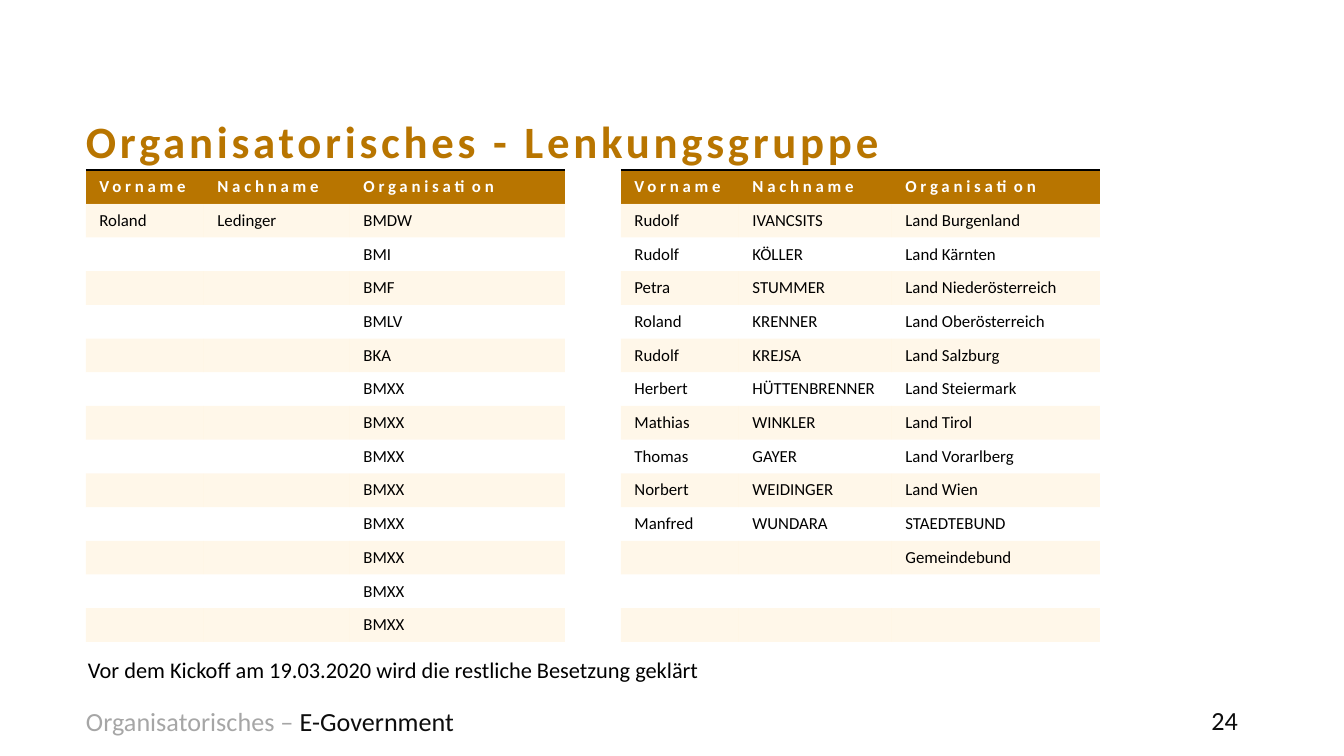
import pptx
import pptx.dml.color
import pptx.enum.text
import pptx.util
import lxml.etree

PX = 914400 / 134.4
MID = pptx.enum.text.MSO_ANCHOR.MIDDLE
TOP = pptx.enum.text.MSO_ANCHOR.TOP
LEFT = pptx.enum.text.PP_ALIGN.LEFT
RIGHT = pptx.enum.text.PP_ALIGN.RIGHT
NS = "{http://schemas.openxmlformats.org/drawingml/2006/main}"
THEME = {
    "gold": "B87500", "sand": "FFD895", "white": "FFFFFF",
    "black": "000000", "grey": "A6A6A6", "ink": "0D0D0D",
    "font": "Calibri", "title": 24, "foot": 14, "note": 12, "cell": 9,
}


def px(num):
    return pptx.util.Emu(round(num * PX))


def write(para, text, size, tone, bold=False, space=0):
    run = para.add_run()
    run.text = text
    look = {"name": THEME["font"], "size": pptx.util.Pt(THEME[size]), "bold": bold}
    for key, value in look.items():
        setattr(run.font, key, value)
    run.font.color.rgb = pptx.dml.color.RGBColor.from_string(THEME[tone])
    if space:
        run.font._element.set("spc", str(space * 100))


deck = pptx.Presentation()
deck.slide_width, deck.slide_height = px(1344), px(756)
slide = deck.slides.add_slide(deck.slide_layouts[6])

texts = [
    {"at": (86, 112, 1173, 64), "inset": 0, "wrap": False, "anchor": TOP,
     "para": {"alignment": LEFT, "line_spacing": pptx.util.Pt(30)},
     "runs": [("Organisatorisches - Lenkungsgruppe", "title", "gold", True, 2)]},
    {"at": (86, 706, 1011, 30), "inset": 0, "wrap": True, "anchor": MID,
     "para": {"alignment": LEFT},
     "runs": [("Organisatorisches – ", "foot", "grey"),
              ("E-Government", "foot", "ink")]},
    {"at": (949, 700, 302, 40), "inset": 1, "wrap": True, "anchor": MID,
     "para": {"alignment": RIGHT},
     "runs": [("24", "foot", "ink")]},
    {"at": (75, 649, 1210, 40), "inset": 1, "wrap": True, "anchor": TOP,
     "para": {"alignment": LEFT},
     "runs": [("Vor dem Kickoff am 19.03.2020 wird die restliche Besetzung geklärt",
               "note", "black")]},
]
for item in texts:
    frame = slide.shapes.add_textbox(*map(px, item["at"])).text_frame
    side, edge = px(13 * item["inset"]), px(7 * item["inset"])
    form = {"word_wrap": item["wrap"], "vertical_anchor": item["anchor"],
            "margin_left": side, "margin_right": side,
            "margin_top": edge, "margin_bottom": edge}
    for key, value in form.items():
        setattr(frame, key, value)
    para = frame.paragraphs[0]
    for key, value in item["para"].items():
        setattr(para, key, value)
    for run in item["runs"]:
        write(para, *run)

head = ("Vorname", "Nachname", "Organisation")
blank = ("", "", "")
units = ["BMI", "BMF", "BMLV", "BKA"] + ["BMXX"] * 8
staff = [("Roland", "Ledinger", "BMDW")] + [("", "", unit) for unit in units]
lands = [
    ("Rudolf", "IVANCSITS", "Land Burgenland"),
    ("Rudolf", "KÖLLER", "Land Kärnten"),
    ("Petra", "STUMMER", "Land Niederösterreich"),
    ("Roland", "KRENNER", "Land Oberösterreich"),
    ("Rudolf", "KREJSA", "Land Salzburg"),
    ("Herbert", "HÜTTENBRENNER", "Land Steiermark"),
    ("Mathias", "WINKLER", "Land Tirol"),
    ("Thomas", "GAYER", "Land Vorarlberg"),
    ("Norbert", "WEIDINGER", "Land Wien"),
    ("Manfred", "WUNDARA", "STAEDTEBUND"),
    ("", "", "Gemeindebund"),
    blank,
    blank,
]
for left, wides, rows in [(86, (118, 146, 215), staff), (621, (118, 153, 208), lands)]:
    rows = [head] + rows
    shape = slide.shapes.add_table(len(rows), len(wides), px(left), px(170),
                                   px(sum(wides)), px(33 * len(rows)))
    table = shape.table
    for key in ("first_row", "horz_banding"):
        setattr(table, key, False)
    style = table._tbl.tblPr.find(NS + "tableStyleId")
    style.text = "{2D5ABB26-0587-4C30-8999-92F81FD0307C}"
    for col, wide in zip(table.columns, wides):
        col.width = px(wide)
    for i, row in enumerate(rows):
        for j, text in enumerate(row):
            cell = table.cell(i, j)
            cell.vertical_anchor = MID
            para = cell.text_frame.paragraphs[0]
            if i == 0:
                write(para, text, "cell", "white", True, 2)
            elif text:
                write(para, text, "cell", "black")
            else:
                mark = lxml.etree.SubElement(para._p, NS + "endParaRPr",
                                             sz=str(THEME["cell"] * 100))
                lxml.etree.SubElement(mark, NS + "latin", typeface=THEME["font"])
            if i and i % 2 == 0:
                cell.fill.background()
                continue
            cell.fill.solid()
            tone = THEME["sand" if i else "gold"]
            cell.fill.fore_color.rgb = pptx.dml.color.RGBColor.from_string(tone)
            props = cell._tc.tcPr
            if i:
                hue = props.find(NS + "solidFill")[0]
                lxml.etree.SubElement(hue, NS + "alpha", val="20000")
            else:
                line = lxml.etree.Element(NS + "lnT", w="12700")
                fill = lxml.etree.SubElement(line, NS + "solidFill")
                lxml.etree.SubElement(fill, NS + "srgbClr", val=THEME["black"])
                props.insert(0, line)

deck.save("out.pptx")
